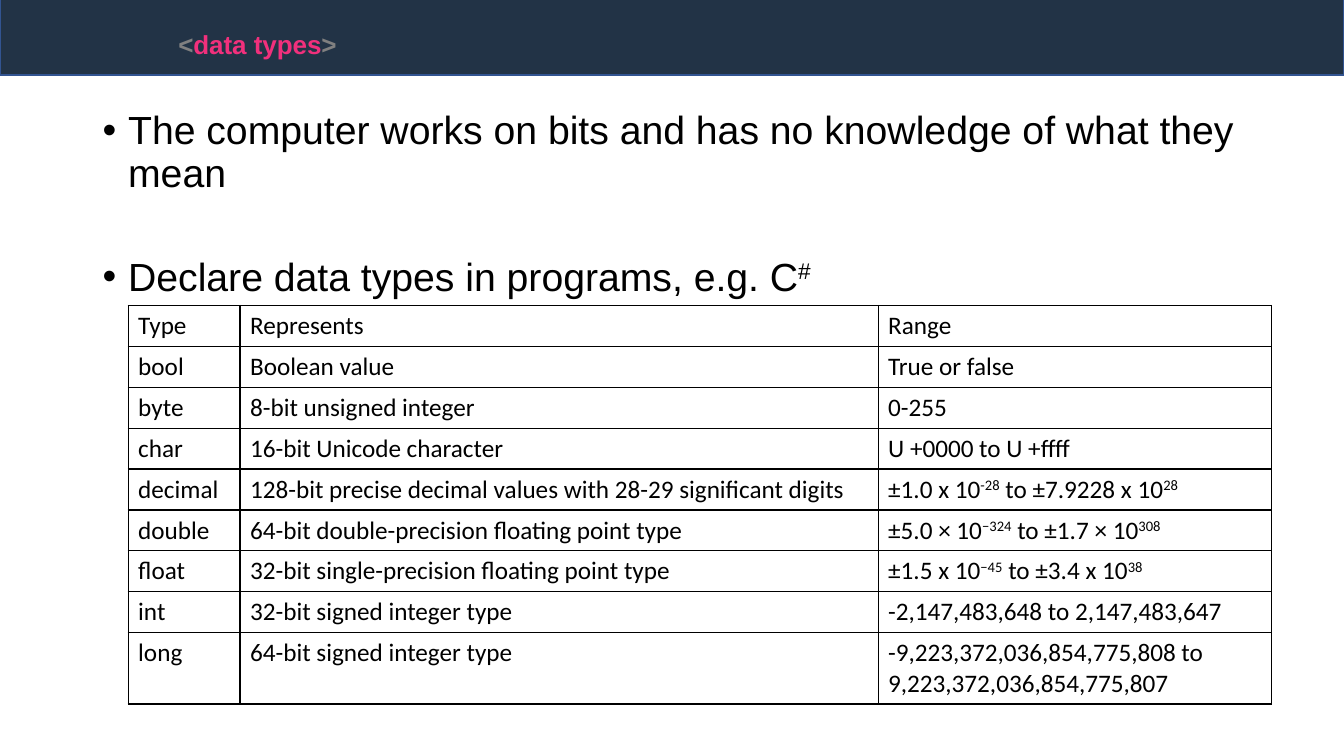
from dataclasses import dataclass

from lxml.etree import SubElement
from pptx import Presentation
from pptx.dml.color import RGBColor
from pptx.enum.shapes import MSO_SHAPE
from pptx.enum.text import MSO_ANCHOR, MSO_AUTO_SIZE, PP_ALIGN
from pptx.oxml.ns import qn
from pptx.util import Cm, Pt


@dataclass(frozen=True)
class Theme:
    band: str = "223346"
    band_line: str = "325491"
    bracket: str = "808080"
    title: str = "F1307C"
    text: str = "000000"
    heading_font: str = "Arial"
    table_font: str = "Calibri"
    title_size: int = 32
    bullet_size: int = 28
    table_size: int = 18


THEME = Theme()

TITLE = [("<", THEME.bracket), ("data types", THEME.title), (">", THEME.bracket)]

# Text pieces alternate between normal and superscript.
BULLETS = [
    ("The computer works on bits and has no knowledge of what they mean",),
    ("Declare data types in programs, e.g. C", "#"),
]
DATA_TYPES = [
    ("Type", "Represents", ("Range",)),
    ("bool", "Boolean value", ("True or false",)),
    ("byte", "8-bit unsigned integer", ("0-255",)),
    ("char", "16-bit Unicode character", ("U +0000 to U +ffff",)),
    ("decimal", "128-bit precise decimal values with 28-29 significant digits",
     ("±1.0 x 10", "-28", " to ±7.9228 x 10", "28")),
    ("double", "64-bit double-precision floating point type",
     ("±5.0 × 10", "−324", " to ±1.7 × 10", "308")),
    ("float", "32-bit single-precision floating point type",
     ("±1.5 x 10", "−45", " to ±3.4 x 10", "38")),
    ("int", "32-bit signed integer type", ("-2,147,483,648 to 2,147,483,647",)),
    ("long", "64-bit signed integer type",
     ("-9,223,372,036,854,775,808 to 9,223,372,036,854,775,807",)),
]
COLUMN_WIDTHS = (2.82, 16.08, 9.91)
ROW_HEIGHT = 1.03
LAST_ROW_HEIGHT = 1.8


def add_text(paragraph, text, *, size, font, color=THEME.text, bold=False, raised=False):
    run = paragraph.add_run()
    run.text = text
    run.font.size = Pt(size)
    run.font.name = font
    run.font.bold = bold
    run.font.color.rgb = RGBColor.from_string(color)
    if raised:
        run._r.get_or_add_rPr().set("baseline", "30000")


def add_pieces(paragraph, pieces, **text_format):
    """Write pieces in turn, raising every second one."""
    for index, piece in enumerate(pieces):
        add_text(paragraph, piece, raised=index % 2 == 1, **text_format)


def add_band(slide, width):
    band = slide.shapes.add_shape(MSO_SHAPE.RECTANGLE, 0, Cm(-0.09), width, Cm(1.98))
    band.shadow.inherit = False
    band.fill.solid()
    band.fill.fore_color.rgb = RGBColor.from_string(THEME.band)
    band.line.color.rgb = RGBColor.from_string(THEME.band_line)
    band.line.width = Pt(1)
    slide.shapes._spTree.insert(2, band._element)  # behind the title


def format_title(title):
    title.left, title.top, title.width, title.height = Cm(4.24), Cm(0.46), Cm(4.57), Cm(1.63)
    frame = title.text_frame
    frame.word_wrap = False
    frame.auto_size = MSO_AUTO_SIZE.NONE
    frame.vertical_anchor = MSO_ANCHOR.TOP
    paragraph = frame.paragraphs[0]
    paragraph.alignment = PP_ALIGN.LEFT
    for text, color in TITLE:
        add_text(paragraph, text, size=THEME.title_size, font=THEME.heading_font,
                 color=color, bold=True, raised=True)


def add_bullets(slide):
    box = slide.shapes.add_textbox(Cm(2.34), Cm(2.67), Cm(29.21), Cm(4.9))
    frame = box.text_frame
    frame.word_wrap = True
    for index, pieces in enumerate(BULLETS):
        paragraph = frame.add_paragraph() if index else frame.paragraphs[0]
        properties = paragraph._p.get_or_add_pPr()
        properties.set("marL", str(Cm(0.64)))
        properties.set("indent", str(Cm(-0.64)))
        SubElement(properties, qn("a:buFont"), typeface=THEME.heading_font)
        SubElement(properties, qn("a:buChar"), char="•")
        paragraph.line_spacing = 0.9
        paragraph.space_before = Pt(44 if index else 0)
        add_pieces(paragraph, pieces, size=THEME.bullet_size, font=THEME.heading_font)


def add_borders(cell):
    properties = cell._tc.get_or_add_tcPr()
    for side in ("lnL", "lnR", "lnT", "lnB"):
        line = SubElement(properties, qn(f"a:{side}"), w=str(Pt(1)))
        fill = SubElement(line, qn("a:solidFill"))
        SubElement(fill, qn("a:srgbClr"), val=THEME.text)


def add_data_types(slide):
    heights = [ROW_HEIGHT] * (len(DATA_TYPES) - 1) + [LAST_ROW_HEIGHT]
    table = slide.shapes.add_table(
        len(DATA_TYPES), len(COLUMN_WIDTHS), Cm(3.23), Cm(7.7),
        Cm(sum(COLUMN_WIDTHS)), Cm(sum(heights))).table
    table.first_row = False
    table.horz_banding = False
    for column, width in zip(table.columns, COLUMN_WIDTHS):
        column.width = Cm(width)
    for row, height, (name, meaning, value_range) in zip(table.rows, heights, DATA_TYPES):
        row.height = Cm(height)
        for cell, pieces in zip(row.cells, ((name,), (meaning,), value_range)):
            add_borders(cell)
            cell.fill.background()
            add_pieces(cell.text_frame.paragraphs[0], pieces,
                       size=THEME.table_size, font=THEME.table_font)


def main():
    presentation = Presentation()
    presentation.slide_width = Cm(33.87)
    presentation.slide_height = Cm(19.05)
    slide = presentation.slides.add_slide(presentation.slide_layouts[5])
    add_band(slide, presentation.slide_width)
    format_title(slide.shapes.title)
    add_bullets(slide)
    add_data_types(slide)
    presentation.save("out.pptx")


if __name__ == "__main__":
    main()
